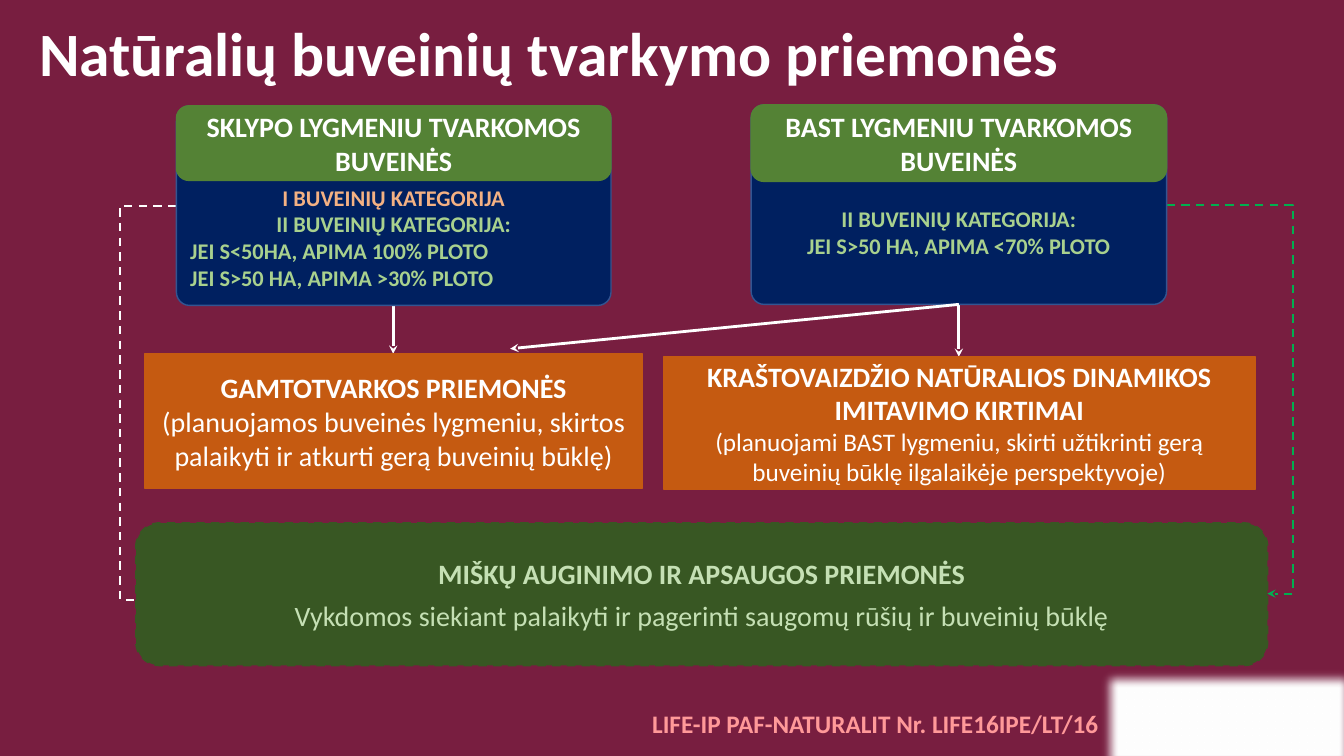
from lxml import etree
from pptx import Presentation, util as u
from pptx.dml.color import RGBColor
from pptx.enum import dml, shapes, text
from pptx.oxml import ns

PX = 9144  # EMU in one px, 100 px to the inch
FONT = "Calibri"
WHITE = "FFFFFF"
BACKGROUND = "781E40"
NAVY, NAVY_EDGE = "002060", "325491"
HEADER_GREEN, DARK_GREEN, ARROW_GREEN = "548235", "385723", "00B050"
ORANGE, PEACH = "C55A11", "F4B183"
LIGHT_GREEN, PALE_GREEN, PINK = "A9D18E", "C5E0B4", "FF9999"
ROUND, SQUARE = shapes.MSO_SHAPE.ROUNDED_RECTANGLE, shapes.MSO_SHAPE.RECTANGLE
CENTER, LEFT = text.PP_ALIGN.CENTER, text.PP_ALIGN.LEFT


def px(*lengths):
    return [u.Emu(length * PX) for length in lengths]


def rgb(color):
    return RGBColor.from_string(color)


def sub(parent, tag, **attributes):
    return etree.SubElement(parent, ns.qn(tag), attributes)


def set_line(line, color, width, dashed=False):
    line.color.rgb = rgb(color)
    line.width = u.Pt(width)
    if dashed:
        line.dash_style = dml.MSO_LINE.DASH


def write(frame, lines, align=CENTER):
    """Each line is (words, size, color, bold) with an optional alignment."""
    frame.word_wrap = True
    frame.vertical_anchor = text.MSO_ANCHOR.MIDDLE
    for index, (words, size, color, bold, *own_align) in enumerate(lines):
        paragraph = frame.add_paragraph() if index else frame.paragraphs[0]
        paragraph.alignment = own_align[0] if own_align else align
        run = paragraph.add_run()
        run.text = words
        run.font.name = FONT
        run.font.size = u.Pt(size)
        run.font.bold = bold
        run.font.color.rgb = rgb(color)


def add_label(slide, box, line):
    frame = slide.shapes.add_textbox(*px(*box)).text_frame
    write(frame, [line], LEFT)
    return frame


def add_box(slide, kind, box, fill, edge, lines=(), width=1, dashed=False):
    shape = slide.shapes.add_shape(kind, *px(*box))
    shape.shadow.inherit = False
    shape.fill.solid()
    shape.fill.fore_color.rgb = rgb(fill)
    set_line(shape.line, edge, width, dashed)
    write(shape.text_frame, lines)
    return shape


def add_habitat_card(slide, box, header_height, header, lines, text_top):
    left, top, width, _ = box
    body = add_box(slide, ROUND, box, NAVY, NAVY_EDGE, lines)
    body.adjustments[0] = 0.066
    body.text_frame.margin_top = px(text_top)[0]
    add_box(slide, ROUND, (left, top, width, header_height), HEADER_GREEN, HEADER_GREEN,
            [(header, 20, WHITE, True)])


def add_arrow(slide, start, end, color=WHITE, width=2, bend_x=None):
    """Straight arrow, or a dashed elbow that turns at bend_x."""
    bent = bend_x is not None
    kind = shapes.MSO_CONNECTOR.ELBOW if bent else shapes.MSO_CONNECTOR.STRAIGHT
    arrow = slide.shapes.add_connector(kind, *px(*start, *end))
    set_line(arrow.line, color, width, dashed=bent)
    properties = arrow._element.spPr
    sub(properties.find(ns.qn("a:ln")), "a:tailEnd", type="stealth")
    sub(properties, "a:effectLst")
    if bent:
        ratio = (bend_x - start[0]) / (end[0] - start[0])
        guides = properties.find(ns.qn("a:prstGeom")).get_or_add_avLst()
        sub(guides, "a:gd", name="adj1", fmla=f"val {round(ratio * 100000)}")


def add_soft_panel(slide, box, radius):
    panel = add_box(slide, SQUARE, box, WHITE, WHITE)
    effects = panel._element.spPr.find(ns.qn("a:effectLst"))
    sub(effects, "a:softEdge", rad=str(radius * PX))


def main():
    presentation = Presentation()
    presentation.slide_width, presentation.slide_height = px(1333, 750)
    slide = presentation.slides.add_slide(presentation.slide_layouts[6])
    slide.background.fill.solid()
    slide.background.fill.fore_color.rgb = rgb(BACKGROUND)

    # Footer and title
    add_soft_panel(slide, (1087, 660, 263, 111), 12)
    footer = add_label(slide, (637, 698, 467, 40),
                       ("LIFE-IP PAF-NATURALIT Nr. LIFE16IPE/LT/16", 18, PINK, True))
    footer.word_wrap = False
    title = add_label(slide, (29, 6, 1216, 101),
                      ("Natūralių buveinių tvarkymo priemonės", 44, WHITE, True))
    title.paragraphs[0].line_spacing = 0.9

    # Arrows behind the boxes
    add_arrow(slide, (390, 303), (390, 351))
    add_arrow(slide, (951, 302), (951, 354))
    add_arrow(slide, (1157, 203), (1257, 589), ARROW_GREEN, 1.5, bend_x=1282)
    add_arrow(slide, (175, 204), (144, 595), WHITE, 1.5, bend_x=119)

    # Habitat cards
    add_habitat_card(slide, (175, 105, 431, 198), 74, "SKLYPO LYGMENIU TVARKOMOS BUVEINĖS", [
        ("I BUVEINIŲ KATEGORIJA", 16, PEACH, True),
        ("II BUVEINIŲ KATEGORIJA:", 16, LIGHT_GREEN, True),
        ("JEI S<50HA, APIMA 100% PLOTO", 16, LIGHT_GREEN, True, LEFT),
        ("JEI S>50 HA, APIMA >30% PLOTO", 16, LIGHT_GREEN, True, LEFT),
    ], text_top=68)
    add_habitat_card(slide, (745, 104, 412, 198), 76, "BAST LYGMENIU TVARKOMOS BUVEINĖS", [
        ("II BUVEINIŲ KATEGORIJA:", 16, LIGHT_GREEN, True),
        ("JEI S>50 HA, APIMA <70% PLOTO", 16, LIGHT_GREEN, True),
    ], text_top=59)

    # Forest measures
    forest = add_box(slide, ROUND, (135, 519, 1122, 141), DARK_GREEN, DARK_GREEN, [
        ("MIŠKŲ AUGINIMO IR APSAUGOS PRIEMONĖS", 20, PALE_GREEN, True),
        ("Vykdomos siekiant palaikyti ir pagerinti saugomų rūšių ir buveinių būklę",
         20, PALE_GREEN, False),
    ], width=1.5, dashed=True)
    forest.text_frame.paragraphs[0].space_after = u.Pt(6)

    # Management measures
    add_box(slide, SQUARE, (658, 354, 587, 131), ORANGE, ORANGE, [
        ("KRAŠTOVAIZDŽIO NATŪRALIOS DINAMIKOS IMITAVIMO KIRTIMAI", 20, WHITE, True),
        ("(planuojami BAST lygmeniu, skirti užtikrinti gerą buveinių būklę "
         "ilgalaikėje perspektyvoje)", 18, WHITE, False),
    ])
    add_box(slide, SQUARE, (144, 351, 493, 134), ORANGE, ORANGE, [
        ("GAMTOTVARKOS PRIEMONĖS", 20, WHITE, True),
        ("(planuojamos buveinės lygmeniu, skirtos palaikyti ir atkurti gerą buveinių būklę)",
         20, WHITE, False),
    ])
    add_arrow(slide, (951, 302), (506, 346))

    presentation.save("out.pptx")


if __name__ == "__main__":
    main()
